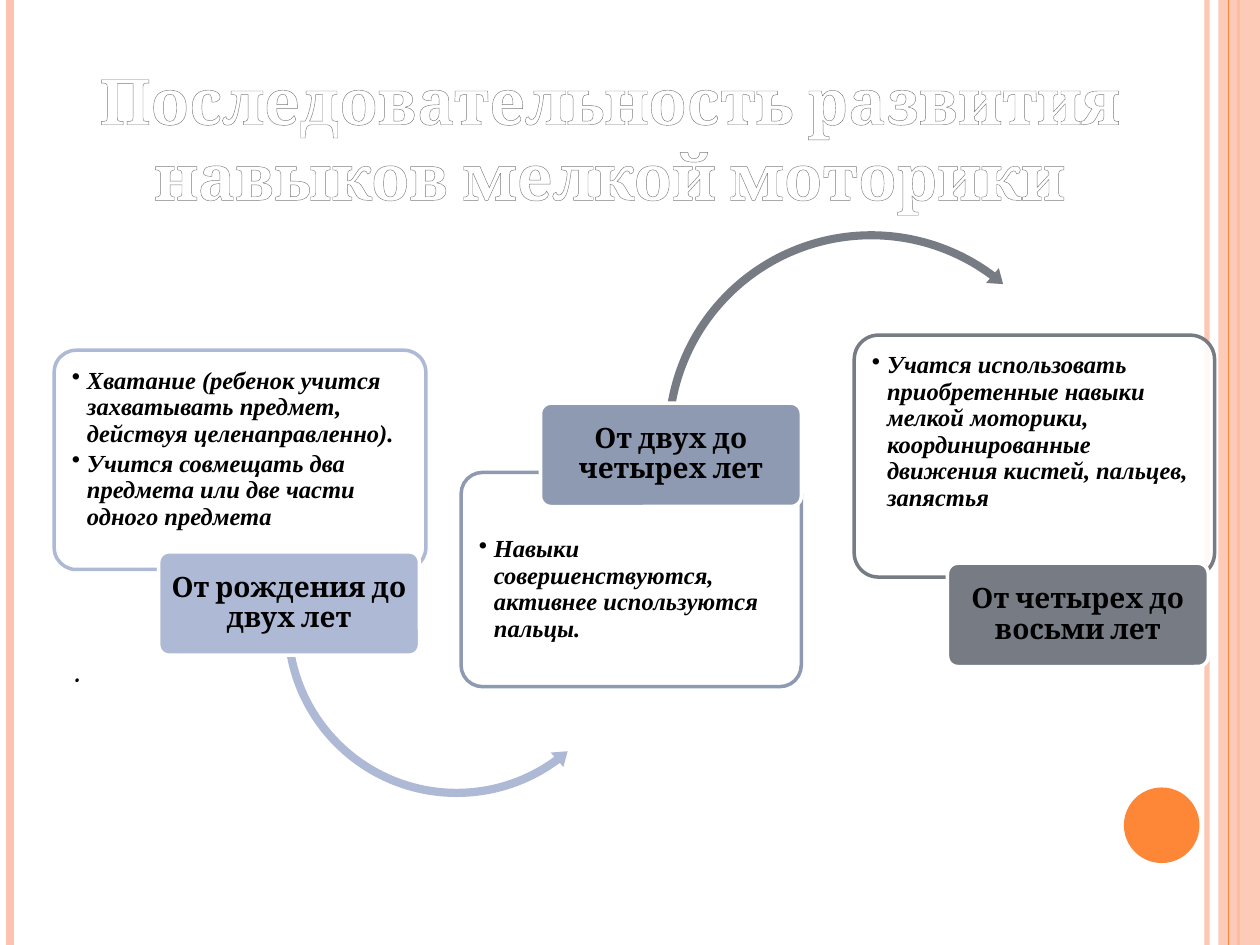
from lxml import etree
from pptx import Presentation
from pptx.dml.color import RGBColor
from pptx.enum.shapes import MSO_CONNECTOR, MSO_SHAPE
from pptx.enum.text import MSO_ANCHOR, MSO_AUTO_SIZE, PP_ALIGN
from pptx.oxml import parse_xml
from pptx.oxml.ns import qn
from pptx.util import Inches, Pt

STRAIGHT = MSO_CONNECTOR.STRAIGHT
RECTANGLE = MSO_SHAPE.RECTANGLE
ROUNDED = MSO_SHAPE.ROUNDED_RECTANGLE
OVAL = MSO_SHAPE.OVAL
LEFT_ARROW = MSO_SHAPE.LEFT_CIRCULAR_ARROW
RIGHT_ARROW = MSO_SHAPE.CIRCULAR_ARROW
TOP, MIDDLE = MSO_ANCHOR.TOP, MSO_ANCHOR.MIDDLE
LEFT, CENTER = PP_ALIGN.LEFT, PP_ALIGN.CENTER
NO_AUTOFIT = MSO_AUTO_SIZE.NONE

DRAWING = "http://schemas.openxmlformats.org/drawingml/2006/main"
HEADING_FONT = "Cambria"
BODY_FONT = "Times New Roman"
ORANGE, PEACH, WHITE, BLACK = "FE8637", "FEC3AE", "FFFFFF", "000000"
BLUE, SLATE, GRAY = "AEBAD5", "8E9AB1", "777C84"
CORNER = 0.1
CORNER_INSET = 0.29
LABEL_SIZE = (2.07, 0.82)
CARD_MARGIN = 0.14

STEPS = [
    {
        "color": BLUE,
        "card": (0.43, 2.78, 2.95, 1.74),
        "text_offset": 0,
        "items": [
            "Хватание (ребенок учится захватывать предмет, действуя целенаправленно).",
            "Учится совмещать два предмета или две части одного предмета",
        ],
        "label_at": (1.26, 4.38),
        "label": "От рождения до двух лет",
        "arrow": (LEFT_ARROW, (2.21, 3.54, 2.83, 2.83), BLUE,
                  2.3, (4.63, 53.47, 169.67), 2.7),
    },
    {
        "color": SLATE,
        "card": (3.66, 3.75, 2.7, 1.7),
        "text_offset": 0.37,
        "items": ["Навыки совершенствуются, активнее используются пальцы."],
        "label_at": (4.29, 3.2),
        "label": "От двух до четырех лет",
        "arrow": (RIGHT_ARROW, (5.23, 1.79, 3.37, 3.37), GRAY,
                  1.9, (3.86, 306.77, 189.81), 2.3),
    },
    {
        "color": GRAY,
        "card": (6.78, 2.66, 2.86, 1.92),
        "text_offset": 0,
        "items": [
            "Учатся использовать приобретенные навыки мелкой моторики, "
            "координированные движения кистей, пальцев, запястья"
        ],
        "label_at": (7.52, 4.47),
        "label": "От четырех до восьми лет",
        "arrow": None,
    },
]


def rgb(color):
    return RGBColor.from_string(color)


def set_alpha(fill_parent, percent):
    color = fill_parent.find(".//" + qn("a:srgbClr"))
    etree.SubElement(color, qn("a:alpha")).set("val", str(percent * 1000))


def place(shape, left, top, width, height):
    shape.left, shape.top = Inches(left), Inches(top)
    shape.width, shape.height = Inches(width), Inches(height)


def add_text(paragraph, text, font_name, size, italic=False):
    run = paragraph.add_run()
    run.text = text
    font = run.font
    font.name, font.size = font_name, Pt(size)
    font.bold, font.italic = True, italic
    font.color.rgb = rgb(BLACK)
    return run


def set_frame(shape, anchor, left, top, right, bottom):
    frame = shape.text_frame
    frame.word_wrap = True
    frame.auto_size = NO_AUTOFIT
    frame.vertical_anchor = anchor
    frame.margin_left, frame.margin_top = Inches(left), Inches(top)
    frame.margin_right, frame.margin_bottom = Inches(right), Inches(bottom)
    return frame


def set_bullet(paragraph, indent, character=None):
    properties = paragraph._p.get_or_add_pPr()
    properties.set("marL", str(Inches(indent)))
    properties.set("indent", str(Inches(-indent)))
    if character:
        etree.SubElement(properties, qn("a:buChar")).set("char", character)
    else:
        etree.SubElement(properties, qn("a:buNone"))


def add_shape(slide, kind, box, fill, line=None, alpha=None):
    shape = slide.shapes.add_shape(kind, *map(Inches, box))
    shape.shadow.inherit = False
    shape.fill.solid()
    shape.fill.fore_color.rgb = rgb(fill)
    if alpha:
        set_alpha(shape._element.spPr.find(qn("a:solidFill")), alpha)
    if line:
        shape.line.color.rgb = rgb(line)
        shape.line.width = Pt(2)
    else:
        shape.line.fill.background()
    return shape


def add_stripe(slide, left, color, width, alpha=None):
    line = slide.shapes.add_connector(
        STRAIGHT, Inches(left), 0, Inches(left), Inches(7.5))
    line.line.color.rgb = rgb(color)
    line.line.width = Pt(width)
    properties = line._element.spPr
    if alpha:
        set_alpha(properties, alpha)
    etree.SubElement(properties, qn("a:effectLst"))


def add_background(slide):
    add_stripe(slide, 9.58, PEACH, 3, 93)
    add_stripe(slide, 0.08, PEACH, 4.5)
    add_stripe(slide, 9.83, ORANGE, 1.5)
    add_shape(slide, RECTANGLE, (9.67, 0, 0.33, 7.5), PEACH, alpha=87)
    add_stripe(slide, 9.75, ORANGE, 0.75)
    add_shape(slide, OVAL, (8.92, 6.25, 0.6, 0.6), ORANGE)


def fill_title(title):
    place(title, 0.35, 0.44, 8.98, 1.31)
    paragraph = set_frame(title, TOP, 0.1, 0.05, 0.1, 0.05).paragraphs[0]
    paragraph.alignment = CENTER
    run = add_text(paragraph, "Последовательность развития навыков мелкой моторики",
                   HEADING_FONT, 36)
    properties = run.font._element
    properties.remove(properties.find(qn("a:solidFill")))
    stops = [(0, WHITE), (9, WHITE), (50, "7F7F7F"), (79, WHITE), (100, WHITE)]
    stop_xml = "".join(
        f'<a:gs pos="{position * 1000}"><a:srgbClr val="{color}"/></a:gs>'
        for position, color in stops)
    outline = parse_xml(
        f'<a:ln xmlns:a="{DRAWING}" w="{Pt(0.83)}"><a:solidFill>'
        '<a:srgbClr val="7D7D7D"/></a:solidFill></a:ln>')
    gradient = parse_xml(
        f'<a:gradFill xmlns:a="{DRAWING}"><a:gsLst>{stop_xml}</a:gsLst>'
        '<a:lin ang="5400000"/></a:gradFill>')
    properties.insert(0, outline)
    properties.insert(1, gradient)


def fill_body(body):
    place(body, 0.5, 5.17, 2.53, 1.91)
    paragraph = set_frame(body, TOP, 0.1, 0.05, 0.1, 0.05).paragraphs[0]
    paragraph.space_before = Pt(6)
    set_bullet(paragraph, 0.3)
    add_text(paragraph, ".", HEADING_FONT, 14, True)


def add_card(slide, box, color, items, text_offset):
    card = add_shape(slide, ROUNDED, box, WHITE, color, 90)
    card.adjustments[0] = CORNER
    margin = CARD_MARGIN - CORNER * CORNER_INSET * min(box[2:])
    frame = set_frame(card, TOP, margin, margin + text_offset, margin, margin)
    for index, item in enumerate(items):
        paragraph = frame.add_paragraph() if index else frame.paragraphs[0]
        paragraph.alignment = LEFT
        paragraph.line_spacing = 0.9
        paragraph.space_after = Pt(2)
        set_bullet(paragraph, 0.12, "•")
        add_text(paragraph, item, BODY_FONT, 14, True)


def add_arrow(slide, kind, box, color, thickness, angles, head):
    arrow = add_shape(slide, kind, box, color)
    values = [thickness / 100, *(angle * 0.6 for angle in angles), head / 100]
    for index, value in enumerate(values):
        arrow.adjustments[index] = value


def add_label(slide, position, color, text):
    label = add_shape(slide, ROUNDED, (*position, *LABEL_SIZE), color, WHITE)
    label.adjustments[0] = CORNER
    paragraph = set_frame(label, MIDDLE, 0.03, 0.02, 0.03, 0.02).paragraphs[0]
    paragraph.alignment = CENTER
    paragraph.line_spacing = 0.9
    add_text(paragraph, text, HEADING_FONT, 16)


def main():
    presentation = Presentation()
    presentation.slide_width, presentation.slide_height = Inches(10), Inches(7.5)
    slide = presentation.slides.add_slide(presentation.slide_layouts[1])
    add_background(slide)
    fill_title(slide.shapes.title)
    fill_body(slide.placeholders[1])
    for step in STEPS:
        add_card(slide, step["card"], step["color"], step["items"], step["text_offset"])
        if step["arrow"]:
            add_arrow(slide, *step["arrow"])
        add_label(slide, step["label_at"], step["color"], step["label"])
    presentation.save("out.pptx")


if __name__ == "__main__":
    main()
